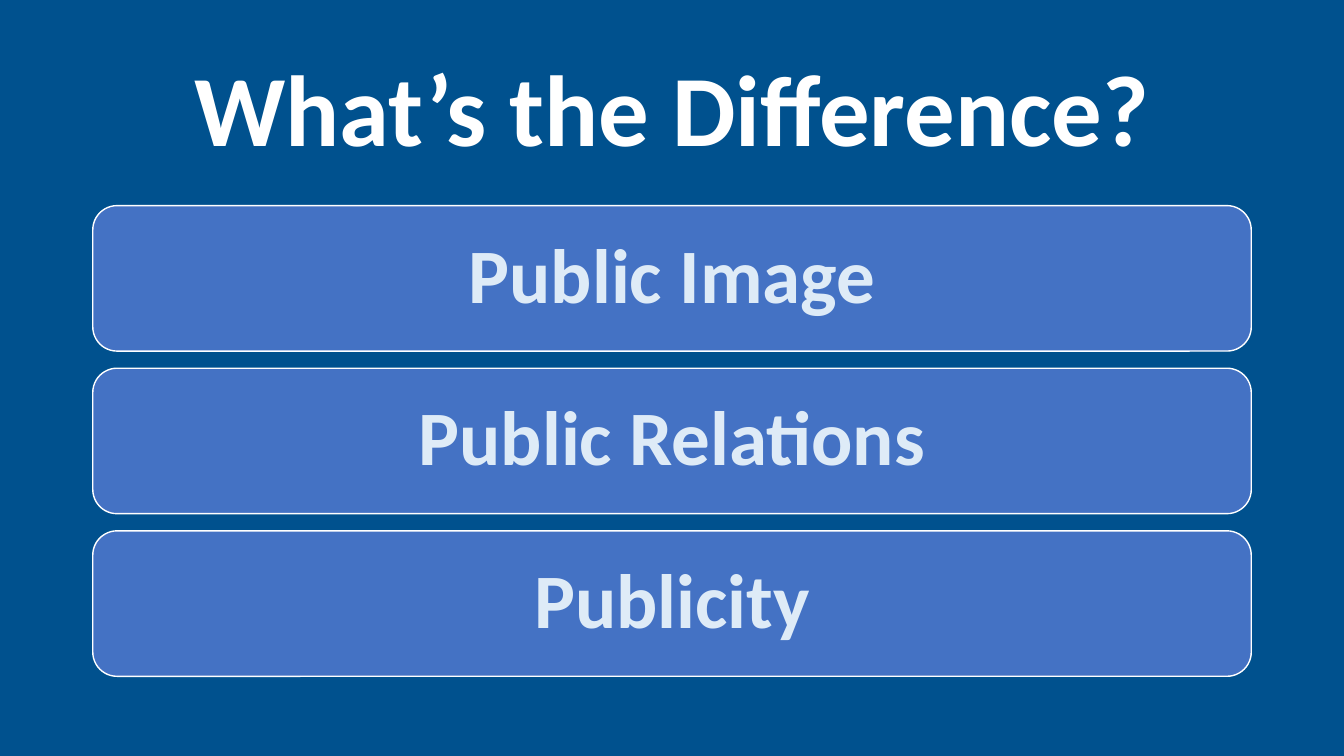
import dataclasses

import pptx
import pptx.dml.color
import pptx.enum.shapes
import pptx.enum.text
import pptx.util


@dataclasses.dataclass(frozen=True)
class Theme:
    font: str = "Calibri"
    background: str = "00518E"
    card: str = "4472C4"
    white: str = "FFFFFF"
    card_text: str = "DEEBF7"
    title_size: int = 72
    card_size: int = 55
    line_spacing: float = 0.9
    outline: int = 1


@dataclasses.dataclass(frozen=True)
class Box:
    left: float
    top: float
    width: float
    height: float

    def place(self, shape):
        shape.left, shape.top, shape.width, shape.height = self.lengths()

    def lengths(self):
        return [pptx.util.Inches(value) for value in dataclasses.astuple(self)]

    def rows(self, count, gap):
        height = (self.height - gap * (count - 1)) / count
        return [
            Box(self.left, self.top + index * (height + gap), self.width, height)
            for index in range(count)
        ]


THEME = Theme()
SLIDE_WIDTH, SLIDE_HEIGHT = 13.33, 7.5
MARGIN = 0.92
CONTENT_WIDTH = SLIDE_WIDTH - 2 * MARGIN
TITLE_BOX = Box(MARGIN, 0.4, CONTENT_WIDTH, 1.45)
CARDS_BOX = Box(MARGIN, 2.04, CONTENT_WIDTH, 4.67)
CARD_GAP = 0.17
CARD_INSET = 0.3


def color(value):
    return pptx.dml.color.RGBColor.from_string(value)


def write_text(shape, text, *, size, fill, bold=True, inset=0.1):
    frame = shape.text_frame
    frame.word_wrap = True
    frame.auto_size = pptx.enum.text.MSO_AUTO_SIZE.NONE
    frame.vertical_anchor = pptx.enum.text.MSO_ANCHOR.MIDDLE
    frame.margin_left = frame.margin_right = pptx.util.Inches(inset)
    frame.margin_top = frame.margin_bottom = pptx.util.Inches(inset / 2)
    paragraph = frame.paragraphs[0]
    paragraph.alignment = pptx.enum.text.PP_ALIGN.CENTER
    paragraph.line_spacing = THEME.line_spacing
    run = paragraph.add_run()
    run.text = text
    run.font.name = THEME.font
    run.font.size = pptx.util.Pt(size)
    run.font.bold = bold
    run.font.color.rgb = color(fill)


def add_title(slide, box, text):
    title = slide.shapes.title
    box.place(title)
    write_text(title, text, size=THEME.title_size, fill=THEME.white)


def add_cards(slide, box, labels):
    for row, label in zip(box.rows(len(labels), CARD_GAP), labels):
        card = slide.shapes.add_shape(
            pptx.enum.shapes.MSO_SHAPE.ROUNDED_RECTANGLE, *row.lengths()
        )
        card.shadow.inherit = False
        card.fill.solid()
        card.fill.fore_color.rgb = color(THEME.card)
        card.line.color.rgb = color(THEME.white)
        card.line.width = pptx.util.Pt(THEME.outline)
        write_text(
            card, label, size=THEME.card_size, fill=THEME.card_text, inset=CARD_INSET
        )


def main():
    presentation = pptx.Presentation()
    presentation.slide_width = pptx.util.Inches(SLIDE_WIDTH)
    presentation.slide_height = pptx.util.Inches(SLIDE_HEIGHT)
    title_only = presentation.slide_layouts.get_by_name("Title Only")
    slide = presentation.slides.add_slide(title_only)
    slide.background.fill.solid()
    slide.background.fill.fore_color.rgb = color(THEME.background)
    add_title(slide, TITLE_BOX, "What’s the Difference?")
    add_cards(slide, CARDS_BOX, ["Public Image", "Public Relations", "Publicity"])
    presentation.save("out.pptx")


if __name__ == "__main__":
    main()
